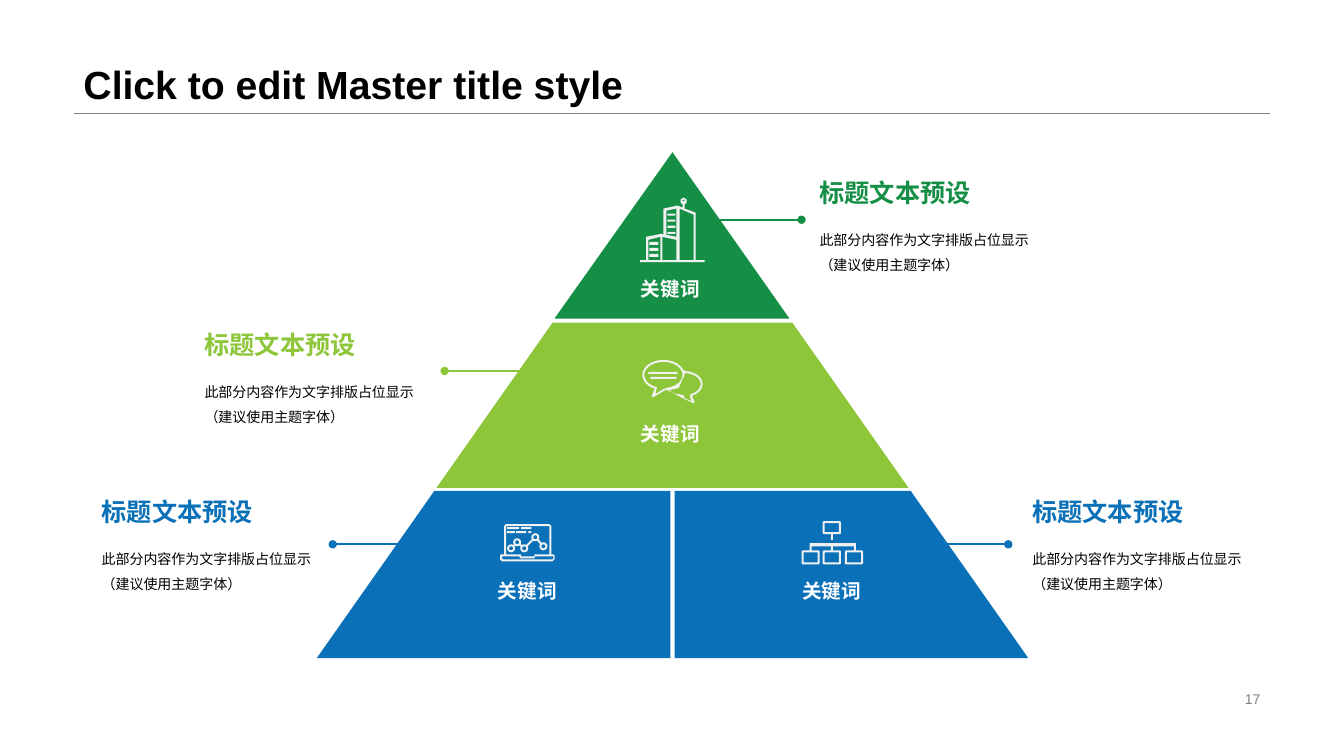
"""Build a pyramid slide with four labelled blocks."""
import math

import pptx
import pptx.dml.color
import pptx.enum.shapes
import pptx.enum.text
import pptx.oxml
import pptx.oxml.ns
import pptx.util

RGB = pptx.dml.color.RGBColor
GREEN = RGB(0x15, 0x8F, 0x46)
LIME = RGB(0x8D, 0xC6, 0x39)
BLUE = RGB(0x0A, 0x71, 0xB8)
GREY = RGB(0x80, 0x80, 0x80)
PALE = RGB(0xF0, 0xF0, 0xF0)
WHITE = RGB(0xFF, 0xFF, 0xFF)
BLACK = RGB(0, 0, 0)
ALIGN = pptx.enum.text.PP_ALIGN
ANCHOR = pptx.enum.text.MSO_ANCHOR
APEX_X, APEX_Y, SLOPE = 667, 151, 0.703


def px(length):
    """Turn px, a hundredth of an inch each, into EMU."""
    return pptx.util.Emu(round(length * 9144))


def arc(center, radii, start, stop, step=15):
    """List points along an ellipse between two angles in degrees."""
    return [(center[0] + radii[0] * math.cos(math.radians(angle)),
             center[1] + radii[1] * math.sin(math.radians(angle)))
            for angle in range(start, stop + 1, step)]


def disc(center, radius):
    """List the corners of a small disc."""
    return arc(center, (radius, radius), 0, 330, 30)


def bar(left, top, right, bottom):
    """List the corners of a rectangle."""
    return [(left, top), (right, top), (right, bottom), (left, bottom)]


def ring(left, top, right, bottom):
    """List the outer and inner contours of a frame with cut corners."""
    outer = [(left + 1, top), (right - 1, top), (right, top + 1),
             (right, bottom - 1), (right - 1, bottom), (left + 1, bottom),
             (left, bottom - 1), (left, top + 1)]
    return [outer, bar(left + 2, top + 2, right - 2, bottom - 2)]


def link(start, end, radius):
    """List the corners of a thin band between two discs."""
    length = math.dist(start, end)
    x, y = ((b - a) / length for a, b in zip(start, end))
    return [(point[0] + x * along - y * side, point[1] + y * along + x * side)
            for point, along, side in ((start, radius, 1), (end, -radius, 1),
                                       (end, -radius, -1), (start, radius, -1))]


def buildings():
    """List the contours of the city icon."""
    skyline = [(679, 203), (679, 207), (690, 211), (690, 258), (699, 258),
               (699, 260), (635, 260), (635, 258), (641, 258), (641, 235),
               (656, 232), (658, 233), (658, 207), (672, 204), (677, 206),
               (677, 203), (675, 201), (675, 198), (678, 196), (681, 198),
               (681, 201)]
    walls = [[(657, 235), (657, 258), (671, 258), (671, 238)],
             [(655, 235), (643, 238), (643, 258), (655, 258)],
             [(674, 207), (674, 258), (688, 258), (688, 213)],
             [(671, 207), (661, 209), (661, 233), (671, 235)]]
    windows = [bar(644, y, 653, y + 3) for y in (240, 246, 252)]
    windows += [bar(662, y, 670, y + 2) for y in (212, 218, 224, 230)]
    return [skyline, disc((678, 199), 1)] + walls + windows


def bubbles():
    """List the contours of the conversation icon."""
    near, far = (658, 372), (678, 381)
    outer = (arc(near, (21, 15), 115, 345) + arc(far, (19, 13), -86, 64)
             + [(689, 399), (688, 400), (677, 395), (662, 387), (660, 387),
                (648, 394), (646, 393), (649, 387)])
    left = arc(near, (19, 13), 110, 440) + [(658, 386), (650, 391)]
    right = arc(far, (17, 11), -86, 64) + [
        (684, 393), (686, 398), (679, 395), (678, 392), (667, 390), (664, 387),
        (673, 385), (679, 372)]
    return [outer, left, right, bar(643, 369, 672, 371), bar(645, 374, 671, 376)]


def laptop():
    """List the contours of the line chart icon."""
    body = [(502, 520), (545, 520), (547, 522), (547, 550), (549, 550),
            (550, 551), (550, 555), (548, 557), (498, 557), (496, 555),
            (496, 551), (497, 550), (500, 550), (500, 522)]
    base = [(498, 552), (515, 552), (516, 554), (530, 554), (531, 552),
            (549, 552), (549, 554), (548, 555), (499, 555), (498, 554)]
    screen = [(502, 522), (545, 522), (545, 550), (530, 550), (530, 552),
              (517, 552), (517, 550), (502, 550)]
    words = [bar(left, top, right, top + 2) for left, right, top in (
        (503, 515, 523), (517, 527, 523), (503, 511, 527), (512, 522, 527),
        (524, 527, 527))]
    nodes = [(507, 544), (513, 538), (520, 544), (531, 533), (539, 542)]
    dots = [disc(node, radius) for node in nodes for radius in (4, 2)]
    links = [link(start, end, 4) for start, end in zip(nodes, nodes[1:])]
    return [body, base, screen] + words + dots + links


def chart_tree():
    """List the contours of the organisation icon."""
    contours = ring(816, 517, 834, 530)
    contours += [bar(824, 530, 826, 536), bar(803, 539, 849, 542)]
    for left, stem in ((795, 803), (816, 824), (838, 847)):
        contours += ring(left, 546, left + 18, 560)
        contours.append(bar(stem, 542, stem + 2, 546))
    return contours


class Canvas:
    """Hold the style and the page, and draw each kind of element."""

    font = "Arial"

    def __init__(self, page):
        """Keep the page to draw on."""
        self.page = page

    def text(self, text, at, size=10, color=BLACK, bold=False, align=ALIGN.LEFT,
             anchor=ANCHOR.TOP, wrap=True, spacing=1.0):
        """Add a text box with one paragraph."""
        box = self.page.shapes.add_textbox(*map(px, at))
        frame = box.text_frame
        frame.word_wrap = wrap
        frame.vertical_anchor = anchor
        para = frame.paragraphs[0]
        para.alignment = align
        para.line_spacing = spacing
        span = para.add_run()
        span.text = text
        span.font.name = self.font
        span.font.size = pptx.util.Pt(size)
        span.font.bold = bold
        span.font.color.rgb = color

    def line(self, start, end, color, width, dot=False):
        """Add a straight line, with a dot at its end if asked."""
        kind = pptx.enum.shapes.MSO_CONNECTOR.STRAIGHT
        line = self.page.shapes.add_connector(kind, *map(px, start + end))
        line.line.color.rgb = color
        line.line.width = pptx.util.Pt(width)
        names = pptx.oxml.ns.nsdecls("a")
        if dot:
            tail = pptx.oxml.parse_xml(f'<a:tailEnd {names} type="oval"/>')
            line.line._get_or_add_ln().append(tail)
        line._element.spPr.append(pptx.oxml.parse_xml(f"<a:effectLst {names}/>"))

    def area(self, contours, color):
        """Add one filled freeform made of closed contours."""
        scaled = [[(px(x), px(y)) for x, y in points] for points in contours]
        builder = self.page.shapes.build_freeform(*scaled[0][0])
        for points in scaled:
            if points is not scaled[0]:
                builder.move_to(*points[0])
            builder.add_line_segments(points[1:], close=True)
        shape = builder.convert_to_shape()
        shape.shadow.inherit = False
        shape.fill.solid()
        shape.fill.fore_color.rgb = color
        shape.line.fill.background()

    def block(self, top, bottom, color, sides=(-1, 1), gap=0):
        """Add a slice of the pyramid, whole or one side of it."""
        upper, lower = (SLOPE * (y - APEX_Y) for y in (top, bottom))
        left, right = sides

        def edge(side, half):
            return APEX_X + (side * half if side else gap)

        self.area([[(edge(left, upper), top), (edge(right, upper), top),
                    (edge(right, lower), bottom), (edge(left, lower), bottom)]],
                  color)

    def callout(self, left, top, lead, color):
        """Add a description and the heading above it."""
        self.text("此部分内容作为文字排版占位显示（建议使用主题字体）",
                  (left, top + lead, 235, 65), spacing=1.5)
        self.text("标题文本预设", (left, top, 235, 45), size=18, color=color,
                  bold=True, wrap=False)


def main():
    """Build the deck and save it."""
    deck = pptx.Presentation()
    deck.slide_width, deck.slide_height = px(1333), px(750)
    canvas = Canvas(deck.slides.add_slide(deck.slide_layouts[6]))

    canvas.line((73, 112), (1260, 112), GREY, 0.25)
    canvas.text("Click to edit Master title style", (73, 0, 1187, 112), size=28,
                bold=True, anchor=ANCHOR.BOTTOM, spacing=0.9)
    canvas.text("17", (942, 682, 318, 23), color=GREY, align=ALIGN.RIGHT,
                anchor=ANCHOR.MIDDLE)
    for x, y, reach, color in ((684, 218, 111, GREEN), (552, 368, -111, LIME),
                               (441, 540, -111, BLUE), (889, 540, 111, BLUE)):
        canvas.line((x, y), (x + reach, y), color, 1.25, dot=True)

    canvas.block(320, 484, LIME)
    canvas.area(bubbles(), PALE)
    canvas.block(487, 653, BLUE, (-1, 0), -2)
    canvas.block(487, 653, BLUE, (0, 1), 2)
    canvas.area(chart_tree(), PALE)
    canvas.area(laptop(), PALE)
    canvas.area([[(783, 316), (APEX_X, APEX_Y), (550, 316)]], GREEN)
    canvas.area(buildings(), PALE)

    for left, top in ((615, 258), (615, 402), (473, 557), (775, 557)):
        canvas.text("关键词", (left, top, 100, 57), size=14, color=WHITE, bold=True,
                    align=ALIGN.CENTER, anchor=ANCHOR.MIDDLE, wrap=False)
    for left, top, lead, color in ((803, 171, 45, GREEN), (1014, 487, 46, BLUE),
                                   (91, 487, 46, BLUE), (193, 322, 45, LIME)):
        canvas.callout(left, top, lead, color)
    deck.save("out.pptx")


if __name__ == "__main__":
    main()
